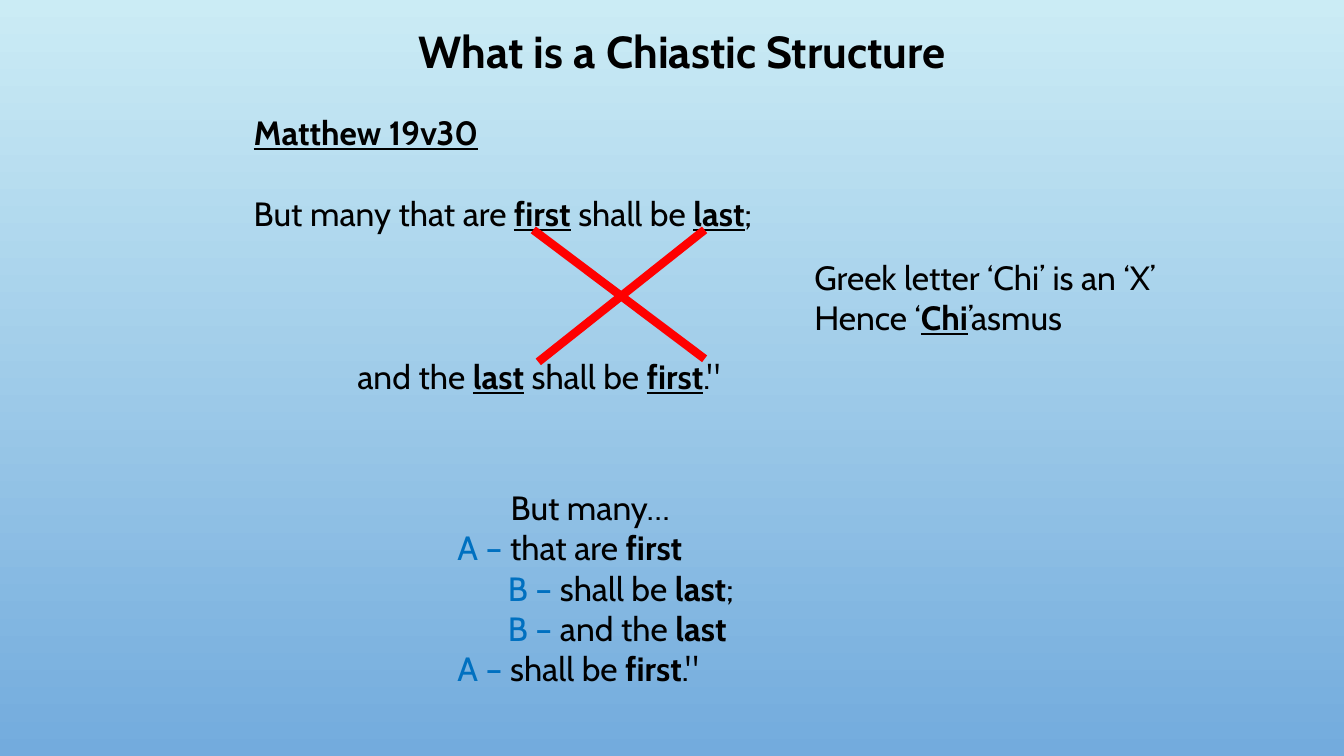
import pptx
import pptx.dml.color
import pptx.enum.shapes
import pptx.enum.text
import pptx.oxml
import pptx.oxml.ns
import pptx.util

Pt = pptx.util.Pt
RGBColor = pptx.dml.color.RGBColor

BLACK = RGBColor(0x00, 0x00, 0x00)
BLUE = RGBColor(0x00, 0x70, 0xC0)
RED = RGBColor(0xFF, 0x00, 0x00)
SKY_TOP = RGBColor(0xCB, 0xEC, 0xF5)
SKY_BOTTOM = RGBColor(0x73, 0xAB, 0xDD)
FONT = "Cabin"
LINE_PITCH = 29.16


def add_run(p, text, *, size=24, bold=False, underline=False, color=BLACK):
    r = p.add_run()
    r.text = text
    r.font.name = FONT
    r.font.size = Pt(size)
    r.font.bold = bold
    r.font.underline = underline
    r.font.color.rgb = color


def add_line(tf, *runs, indent=0, lines_before=0):
    p = tf.paragraphs[0]
    if p.runs:
        p = tf.add_paragraph()
    if indent:
        p._p.get_or_add_pPr().set("marL", str(Pt(indent)))
    if lines_before:
        p.space_before = Pt(lines_before * LINE_PITCH)
    for text, fmt in runs:
        add_run(p, text, **fmt)


def add_box(s, left, top, width, height):
    tf = s.shapes.add_textbox(Pt(left), Pt(top), Pt(width), Pt(height)).text_frame
    tf.word_wrap = True
    return tf


def add_title(s, text):
    sp = s.shapes.title
    sp.left, sp.top, sp.width, sp.height = Pt(81.4), Pt(13), Pt(812), Pt(46)
    tf = sp.text_frame
    tf.auto_size = pptx.enum.text.MSO_AUTO_SIZE.NONE
    tf.vertical_anchor = pptx.enum.text.MSO_ANCHOR.TOP
    p = tf.paragraphs[0]
    p.alignment = pptx.enum.text.PP_ALIGN.CENTER
    add_run(p, text, size=32, bold=True)


def add_stroke(s, x1, y1, x2, y2):
    sp = s.shapes.add_connector(
        pptx.enum.shapes.MSO_CONNECTOR.STRAIGHT, Pt(x1), Pt(y1), Pt(x2), Pt(y2))
    sp.line.color.rgb = RED
    sp.line.width = Pt(6)
    sp._element.spPr.append(pptx.oxml.parse_xml(
        "<a:effectLst %s/>" % pptx.oxml.ns.nsdecls("a")))


def set_background(s):
    fill = s.background.fill
    fill.gradient()
    fill.gradient_angle = 270
    for stop, color in zip(fill.gradient_stops, (SKY_TOP, SKY_BOTTOM)):
        stop.color.rgb = color


def main():
    prs = pptx.Presentation()
    prs.slide_width, prs.slide_height = Pt(960), Pt(540)
    s = prs.slides.add_slide(prs.slide_layouts.get_by_name("Title Only"))
    set_background(s)
    add_title(s, "What is a Chiastic Structure")

    plain = {}
    bold = {"bold": True}
    key = {"bold": True, "underline": True}
    label = {"color": BLUE}

    chiasm = add_box(s, 319.7, 344.2, 476, 152.6)
    add_line(chiasm, ("But many…", plain), indent=38)
    for letter, phrase, word, end, indent in (
        ("A", "that are ", "first", "", 0),
        ("B", "shall be ", "last", ";", 36),
        ("B", "and the ", "last", "", 36),
        ("A", "shall be ", "first", '."', 0),
    ):
        runs = [(letter + " – ", label), (phrase, plain), (word, bold)]
        if end:
            runs.append((end, plain))
        add_line(chiasm, *runs, indent=indent)

    verse = add_box(s, 174.2, 76.3, 476, 211)
    add_line(verse, ("Matthew 19v30", key))
    add_line(verse, ("But many that are ", plain), ("first", key),
             (" shall be ", plain), ("last", key), (";", plain), lines_before=1)
    add_line(verse, ("and the ", plain), ("last", key), (" shall be ", plain),
             ("first", key), ('."', plain), indent=74, lines_before=3)

    add_stroke(s, 380.9, 164.2, 503.3, 256.3)
    add_stroke(s, 503.3, 164.2, 384.5, 258.5)

    note = add_box(s, 574.6, 180, 282.2, 65.5)
    add_line(note, ("Greek letter ‘Chi’ is an ‘X’", plain))
    add_line(note, ("Hence ‘", plain), ("Chi", key), ("’asmus", plain))

    prs.save("out.pptx")


if __name__ == "__main__":
    main()
